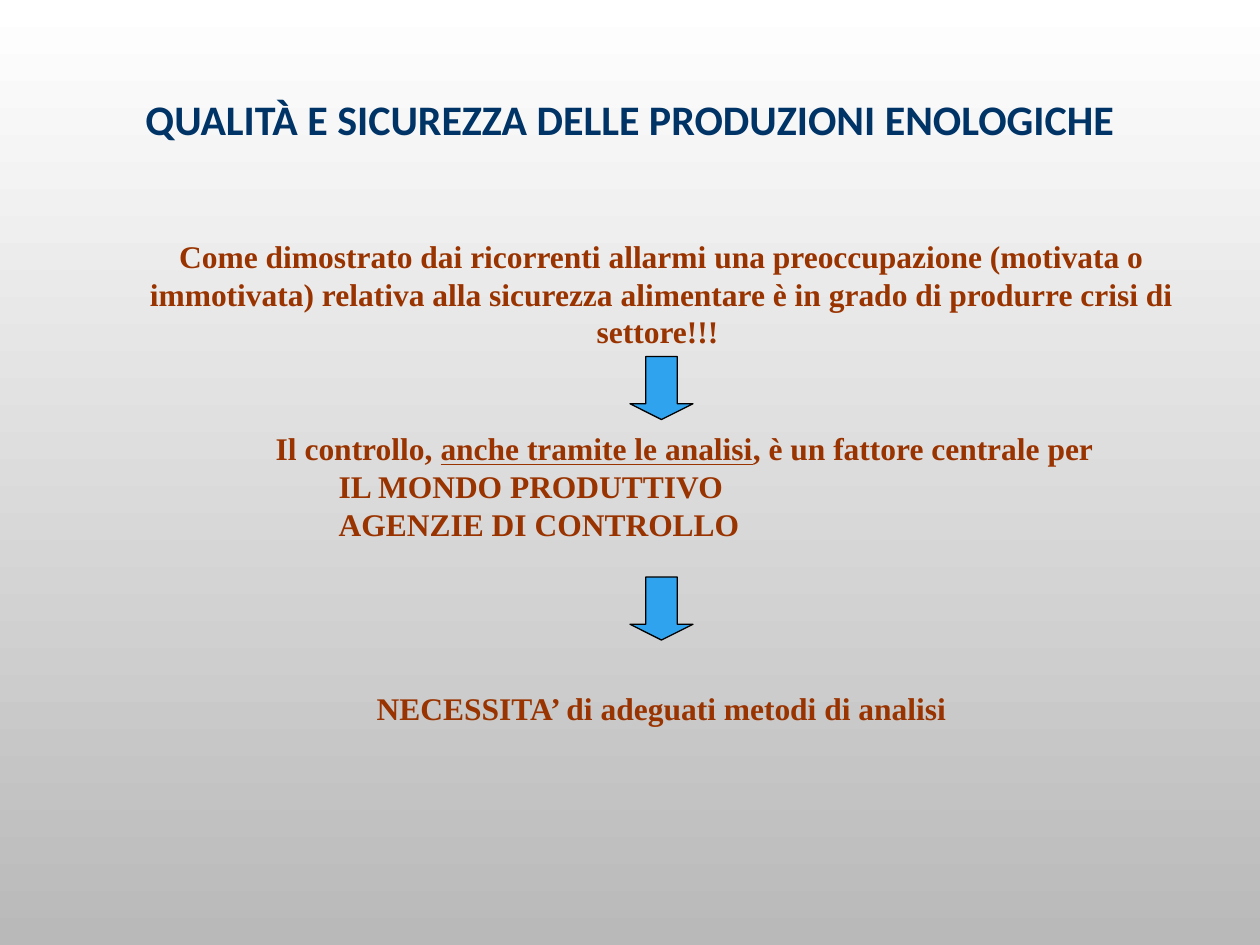
from pptx import Presentation
from pptx.dml.color import RGBColor
from pptx.enum.shapes import MSO_SHAPE
from pptx.enum.text import MSO_ANCHOR, PP_ALIGN
from pptx.util import Inches, Pt

DOWN = MSO_SHAPE.DOWN_ARROW
MIDDLE, TOP = MSO_ANCHOR.MIDDLE, MSO_ANCHOR.TOP
CENTER, LEFT = PP_ALIGN.CENTER, PP_ALIGN.LEFT
WIDE, HIGH = 10, 7.5
AXIS = 5.25
SIDE = 0.5
COLORS = {
    "title": "003366",
    "body": "993300",
    "arrow": "2FA3EE",
    "edge": "000000",
    "light": "FFFFFF",
    "dark": "B9B9B9",
}


def color(name):
    return RGBColor.from_string(COLORS[name])


def paint_back(slide):
    fill = slide.background.fill
    fill.gradient()
    fill.gradient_angle = 270
    for stop, name in zip(fill.gradient_stops, ("light", "dark")):
        stop.color.rgb = color(name)


def add_box(slide, left, top, width, height, anchor=TOP):
    box = slide.shapes.add_textbox(*map(Inches, (left, top, width, height)))
    frame = box.text_frame
    frame.word_wrap = True
    frame.vertical_anchor = anchor
    return frame


def style(para, align=CENTER, face="Times New Roman", size=18, tone="body"):
    para.alignment = align
    font = para.font
    font.name = face
    font.size = Pt(size)
    font.bold = True
    font.color.rgb = color(tone)


def add_title(slide, text):
    frame = add_box(slide, 0.75, 0.09, 8.5, 1.75, MIDDLE)
    para = frame.paragraphs[0]
    para.text = text
    para.line_spacing = 0.9
    style(para, face="Calibri", size=24, tone="title")


def add_claim(slide, text, top, width, height):
    frame = add_box(slide, AXIS - width / 2, top, width, height)
    frame.paragraphs[0].text = text
    style(frame.paragraphs[0])


def add_list(slide, lead, items):
    frame = add_box(slide, 2.09, 3.36, 6.76, 1.3)
    para = frame.paragraphs[0]
    for text, under in lead:
        run = para.add_run()
        run.text = text
        if under:
            run.font.underline = True
    style(para, LEFT)
    for item in items:
        para = frame.add_paragraph()
        para.text = item
        para._p.get_or_add_pPr().set("marL", str(Inches(0.5)))
        style(para, LEFT)


def add_arrow(slide, top):
    arrow = slide.shapes.add_shape(
        DOWN, Inches(AXIS - SIDE / 2), Inches(top), Inches(SIDE), Inches(SIDE))
    arrow.adjustments[0] = 0.5
    arrow.adjustments[1] = 0.25
    arrow.shadow.inherit = False
    arrow.fill.solid()
    arrow.fill.fore_color.rgb = color("arrow")
    arrow.line.color.rgb = color("edge")
    arrow.line.width = Pt(0.75)


def main():
    deck = Presentation()
    deck.slide_width, deck.slide_height = Inches(WIDE), Inches(HIGH)
    slide = deck.slides.add_slide(deck.slide_layouts[6])
    paint_back(slide)
    add_title(slide, "QUALITÀ E SICUREZZA DELLE PRODUZIONI ENOLOGICHE")
    add_claim(
        slide,
        "Come dimostrato dai ricorrenti allarmi una preoccupazione (motivata o "
        "immotivata) relativa alla sicurezza alimentare è in grado di produrre "
        "crisi di settore!!! ",
        1.83, 9, 1.01)
    add_list(
        slide,
        [("Il controllo, ", False), ("anche tramite le analisi", True),
         (", è un fattore centrale per", False)],
        ["IL MONDO PRODUTTIVO", "AGENZIE DI CONTROLLO"])
    add_claim(slide, "NECESSITA’ di adeguati metodi di analisi", 5.42, 5.92, 0.4)
    for top in (2.83, 4.58):
        add_arrow(slide, top)
    deck.save("out.pptx")


if __name__ == "__main__":
    main()
